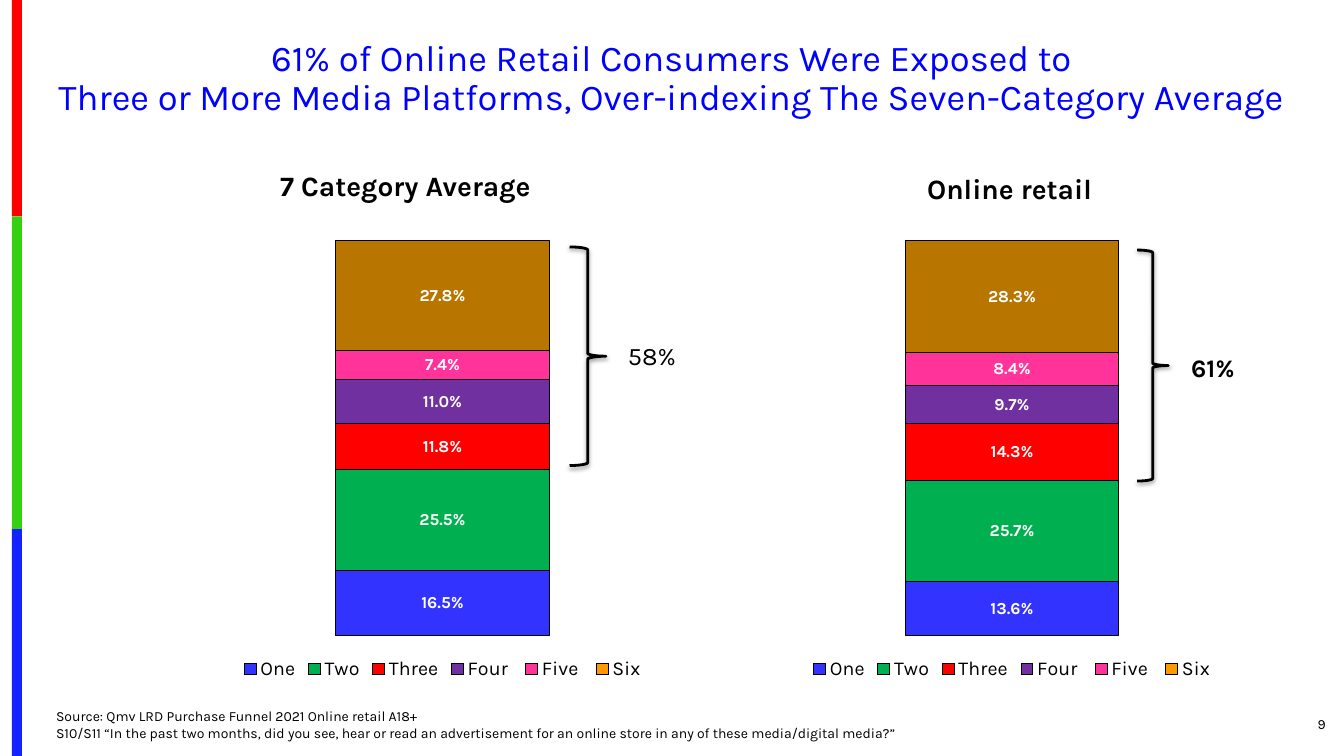
from lxml import etree
from pptx import Presentation
from pptx.chart import data
from pptx.dml.color import RGBColor
from pptx.enum import chart as kinds, shapes, text
from pptx.oxml import ns
from pptx.util import Pt

FONT = "Karla"
BLACK = RGBColor(0, 0, 0)
WHITE = RGBColor(255, 255, 255)
BLUE = RGBColor(0, 0, 255)
BROWN = RGBColor(0xB8, 0x76, 0x00)
BANDS = [
    (0, 154.5, RGBColor(0xFE, 0x00, 0x00)),
    (154.5, 378, RGBColor(0x36, 0xCF, 0x12)),
    (378, 540, RGBColor(0x13, 0x22, 0xFE)),
]
SERIES = [
    ("One", RGBColor(0x33, 0x33, 0xFF)),
    ("Two", RGBColor(0x00, 0xB0, 0x50)),
    ("Three", RGBColor(0xFF, 0x00, 0x00)),
    ("Four ", RGBColor(0x70, 0x30, 0xA0)),
    ("Five ", RGBColor(0xFF, 0x33, 0x99)),
    ("Six", RGBColor(0xFF, 0x99, 0x00)),
]


def style(font, size, color=BLACK, bold=False):
    """Set the face, size, colour and weight of a font."""
    font.name, font.size, font.bold = FONT, Pt(size), bold
    font.color.rgb = color


def label(slide, box, words, size, bold=False, wrap=True):
    """Add a text box and return it."""
    item = slide.shapes.add_textbox(*map(Pt, box))
    frame = item.text_frame
    frame.word_wrap = wrap
    frame.text = words
    for run in frame.paragraphs[0].runs:
        style(run.font, size, bold=bold)
    return item


def stripe(slide, left, width):
    """Stack the colour bands down the left edge."""
    for top, end, color in BANDS:
        band = slide.shapes.add_shape(
            shapes.MSO_SHAPE.RECTANGLE, Pt(left), Pt(top), Pt(width), Pt(end - top))
        band.shadow.inherit = False
        band.fill.solid()
        band.fill.fore_color.rgb = color
        band.line.fill.background()


def heading(slide, box):
    """Place and format the title."""
    title = slide.shapes.title
    title.left, title.top, title.width, title.height = map(Pt, box)
    frame = title.text_frame
    frame.word_wrap = True
    frame.vertical_anchor = text.MSO_ANCHOR.MIDDLE
    frame.text = ("61% of Online Retail Consumers Were Exposed to\v"
                  "Three or More Media Platforms, Over-indexing The Seven-Category Average")
    para = frame.paragraphs[0]
    para.alignment = text.PP_ALIGN.CENTER
    para.line_spacing = 0.9
    for run in para.runs:
        style(run.font, 26, BLUE)


def paint(part, color):
    """Fill a chart part and outline it in black."""
    part.format.fill.solid()
    part.format.fill.fore_color.rgb = color
    part.format.line.color.rgb = BLACK
    part.format.line.width = Pt(0.75)


def stack(slide, box, values):
    """Add a single stacked column with its legend."""
    table = data.CategoryChartData(number_format="0.0%")
    table.categories = ["1"]
    for (name, _), value in zip(SERIES, values):
        table.add_series(name, [value])
    chart = slide.shapes.add_chart(
        kinds.XL_CHART_TYPE.COLUMN_STACKED, *map(Pt, box), table).chart
    style(chart.font, 10)
    chart.has_title = False
    chart.has_legend = True
    chart.legend.position = kinds.XL_LEGEND_POSITION.BOTTOM
    chart.legend.include_in_layout = False
    style(chart.legend.font, 14)
    chart.category_axis.visible = False
    axis = chart.value_axis
    axis.visible = axis.has_major_gridlines = False
    axis.minimum_scale, axis.maximum_scale = 0, 1.2
    plot = chart.plots[0]
    plot.gap_width, plot.overlap = 150, 100
    plot.vary_by_categories = False
    for series, (_, color) in zip(plot.series, SERIES):
        paint(series, color)
        marks = series.data_labels
        marks.show_value = True
        marks.number_format, marks.number_format_is_linked = "0.0%", False
        style(marks.font, 12, WHITE, True)
    paint(plot.series[-1].points[0], BROWN)


def brace(slide, box):
    """Add a right brace with a soft shadow below it."""
    mark = slide.shapes.add_shape(shapes.MSO_SHAPE.RIGHT_BRACE, *map(Pt, box))
    mark.fill.background()
    mark.line.color.rgb = BLACK
    mark.line.width = Pt(2)
    mark.shadow.inherit = False
    effect = mark.element.spPr.find(ns.qn("a:effectLst"))
    shade = etree.SubElement(
        effect, ns.qn("a:outerShdw"), blurRad=str(Pt(3.1)), dist=str(Pt(1.6)),
        dir="5400000", rotWithShape="0")
    color = etree.SubElement(shade, ns.qn("a:srgbClr"), val=str(BLACK))
    etree.SubElement(color, ns.qn("a:alpha"), val="38000")


def panel(slide, box, values, head, span, share):
    """Draw a chart with its heading, brace and share, offset from the box."""
    left, top = box[:2]
    stack(slide, box, values)
    words, x, y, width = head
    label(slide, (left + x, top + y, width, 31.5), words, 20, True, False)
    x, y, width, height = span
    brace(slide, (left + x, top + y, width, height))
    words, x, y, bold = share
    label(slide, (left + x, top + y, 65, 29), words, 18, bold)


def footer(slide, box):
    """Write the source and, at the right, the page number."""
    left, top, width, height = box
    label(slide, (left, top, 673, height),
          "Source: Qmv LRD Purchase Funnel 2021 Online retail A18+\v"
          "S10/S11 “In the past two months, did you see, hear or read an "
          "advertisement for an online store in any of these media/digital media?”", 10)
    page = label(slide, (left + width - 78, top + 0.75, 78, 29), "9", 10)
    page.text_frame.vertical_anchor = text.MSO_ANCHOR.MIDDLE
    page.text_frame.paragraphs[0].alignment = text.PP_ALIGN.RIGHT


def main():
    """Build and save the slide."""
    deck = Presentation()
    deck.slide_width, deck.slide_height = Pt(960), Pt(540)
    slide = deck.slides.add_slide(deck.slide_layouts[5])
    stripe(slide, 8.5, 7.2)
    heading(slide, (19.5, 24.5, 921, 64))
    panel(slide, (117.4, 108, 397.4, 381),
          [0.165, 0.255, 0.118, 0.11, 0.074, 0.278],
          ("7 Category Average", 75.6, 8.6, 214),
          (289.4, 68.4, 26, 156.2), ("58%", 324, 131.8, False))
    panel(slide, (524.2, 108, 397.4, 381),
          [0.136, 0.257, 0.143, 0.097, 0.084, 0.283],
          ("Online retail", 131, 10.8, 139),
          (288, 70.6, 22.3, 165), ("61%", 319.6, 140.4, True))
    footer(slide, (33, 502, 921, 32))
    deck.save("out.pptx")


if __name__ == "__main__":
    main()
